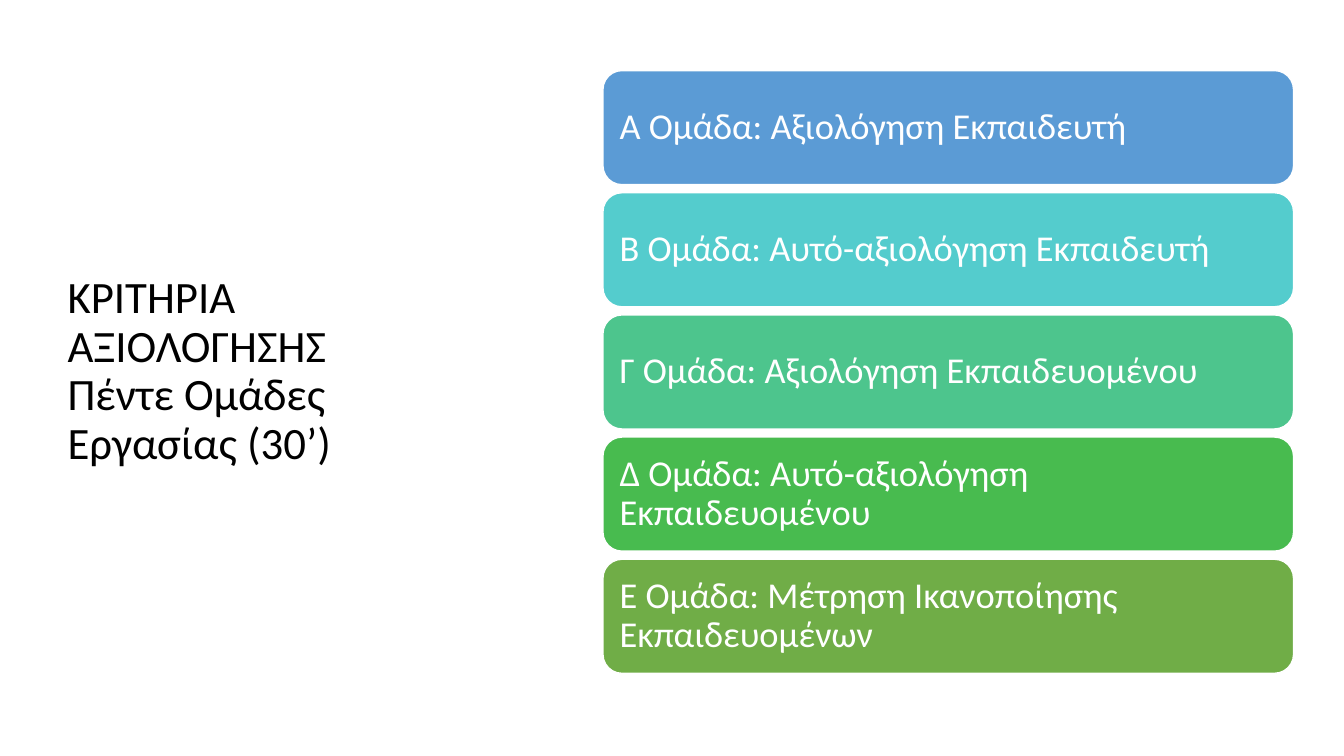
from pptx import Presentation
from pptx.dml.color import RGBColor as RGB
from pptx.enum.shapes import MSO_SHAPE as SHAPE
from pptx.enum.text import MSO_ANCHOR as ANCHOR, MSO_AUTO_SIZE as AUTO, PP_ALIGN as ALIGN
from pptx.util import Inches, Pt

COLORS = {
    "text": "000000",
    "white": "FFFFFF",
    "blue": "5B9BD5",
    "cyan": "54CCCD",
    "teal": "4DC58D",
    "green": "48BB4F",
    "olive": "70AD47",
}
GROUPS = [
    ("Α Ομάδα: Αξιολόγηση Εκπαιδευτή", "blue"),
    ("Β Ομάδα: Αυτό-αξιολόγηση Εκπαιδευτή", "cyan"),
    ("Γ Ομάδα: Αξιολόγηση Εκπαιδευομένου", "teal"),
    ("Δ Ομάδα: Αυτό-αξιολόγηση Εκπαιδευομένου", "green"),
    ("Ε Ομάδα: Μέτρηση Ικανοποίησης Εκπαιδευομένων", "olive"),
]
GRID = {"left": 5.98, "top": 0.7, "width": 6.85, "height": 5.98, "gap": 0.08}
TITLE_BOX = {"left": 0.57, "top": 0.68, "width": 4.16, "height": 6.02}
FRAME = {"word_wrap": True, "auto_size": AUTO.NONE, "vertical_anchor": ANCHOR.MIDDLE}
PARAGRAPH = {"alignment": ALIGN.LEFT, "line_spacing": 0.9}


def set_attrs(target, values):
    for name, value in values.items():
        setattr(target, name, value)


def color(name):
    return RGB.from_string(COLORS[name])


def write(tf, text, size, ink):
    set_attrs(tf, FRAME)
    tf.text = text
    p = tf.paragraphs[0]
    set_attrs(p, PARAGRAPH)
    for r in p.runs:
        set_attrs(r.font, {"name": "Calibri", "size": Pt(size)})
        r.font.color.rgb = color(ink)


def add_title(s, text):
    sp = s.shapes.title
    set_attrs(sp, {name: Inches(value) for name, value in TITLE_BOX.items()})
    write(sp.text_frame, text, 32, "text")


def add_bar(s, row, text, fill):
    pitch = (GRID["height"] + GRID["gap"]) / len(GROUPS)
    sp = s.shapes.add_shape(
        SHAPE.ROUNDED_RECTANGLE,
        Inches(GRID["left"]),
        Inches(GRID["top"] + row * pitch),
        Inches(GRID["width"]),
        Inches(pitch - GRID["gap"]),
    )
    sp.shadow.inherit = False
    sp.fill.solid()
    sp.fill.fore_color.rgb = color(fill)
    sp.line.color.rgb = color("white")
    sp.line.width = Pt(1)
    tf = sp.text_frame
    sides = ("left", "right", "top", "bottom")
    set_attrs(tf, {f"margin_{side}": Inches(0.11) for side in sides})
    write(tf, text, 26, "white")


def main():
    prs = Presentation()
    set_attrs(prs, {"slide_width": Inches(13.33), "slide_height": Inches(7.5)})
    s = prs.slides.add_slide(prs.slide_layouts.get_by_name("Title Only"))
    add_title(s, "ΚΡΙΤΗΡΙΑ ΑΞΙΟΛΟΓΗΣΗΣ\vΠέντε Ομάδες Εργασίας (30’)")
    for row, (text, fill) in enumerate(GROUPS):
        add_bar(s, row, text, fill)
    prs.save("out.pptx")


if __name__ == "__main__":
    main()
